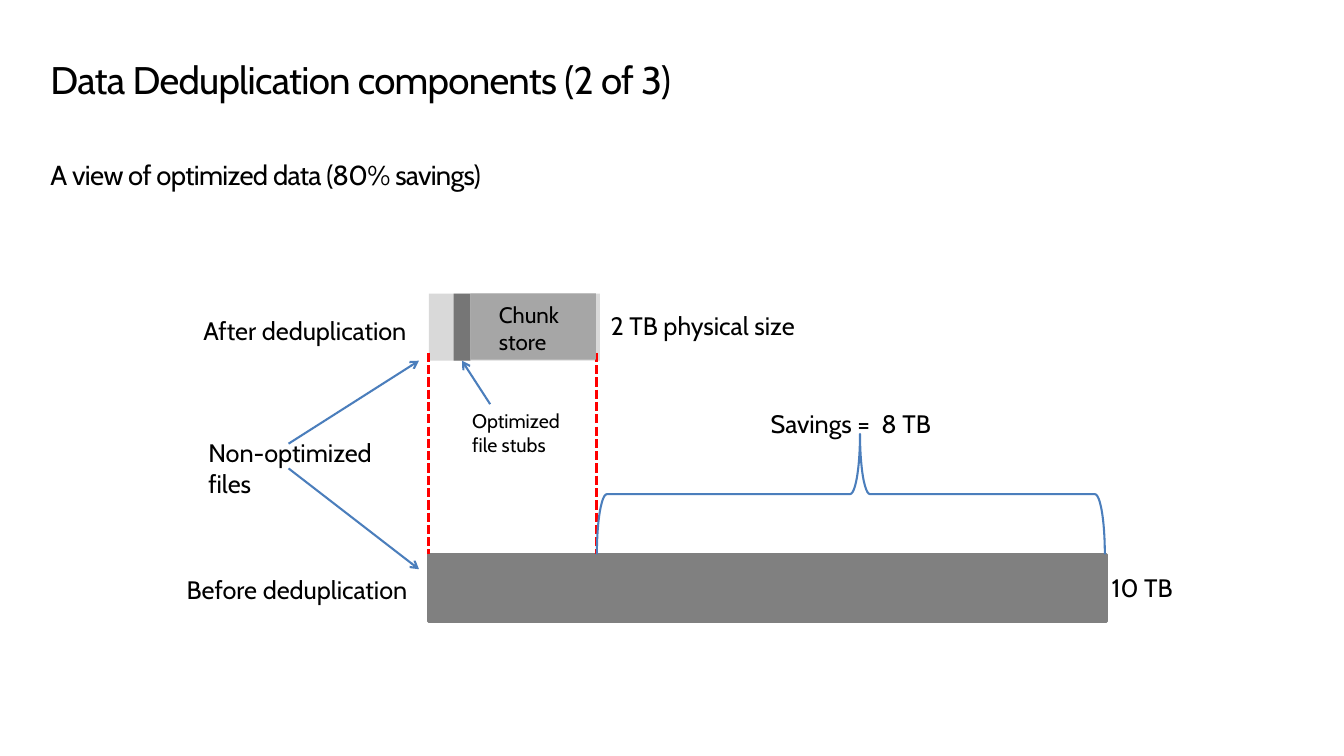
"""Build a slide that compares storage before and after data deduplication."""
from dataclasses import dataclass

from lxml.etree import SubElement
from pptx import Presentation
from pptx.dml.color import RGBColor
from pptx.enum.dml import MSO_LINE_DASH_STYLE as Dash
from pptx.enum.shapes import MSO_CONNECTOR_TYPE as Connector
from pptx.enum.shapes import MSO_SHAPE as Preset
from pptx.enum.text import MSO_ANCHOR as Anchor
from pptx.enum.text import MSO_AUTO_SIZE as AutoSize
from pptx.enum.text import PP_ALIGN as Align
from pptx.oxml.ns import qn
from pptx.util import Inches, Pt

FONT = "Cabin"
COLORS = {
    "text": "000000",
    "unoptimized": "D9D9D9",
    "before": "808080",
    "stubs": "767676",
    "chunks": "A6A6A6",
    "boundary": "FF0000",
    "pointer": "4B7EBC",
}
AFTER_TOP, BEFORE_TOP, BAR_HEIGHT = 2.97, 5.61, 0.68
BAR_LEFT, SAVINGS_LEFT = 4.34, 6.04
BOUNDARY_TOP = 3.57
POINTER_START, POINTER_END = 2.92, 4.24


@dataclass
class Bar:
    """A filled rectangle standing for a share of the storage."""
    color: str
    left: float
    top: float
    width: float
    height: float = BAR_HEIGHT
    outline: float = 0


@dataclass
class Label:
    """A caption with one paragraph per line."""
    lines: tuple[str, ...]
    left: float
    top: float
    width: float
    height: float = 0.42
    size: float = 18.4


@dataclass
class Line:
    """A straight line, either dashed or ending in an arrowhead."""
    color: str
    start: tuple[float, float]
    end: tuple[float, float]
    weight: float = 1.5
    dashed: bool = False


FULL_BARS = [
    Bar("unoptimized", BAR_LEFT, AFTER_TOP, 1.73),
    Bar("before", BAR_LEFT, BEFORE_TOP, 6.86, outline=2),
]
STUB_BAR = Bar("stubs", 4.59, AFTER_TOP, 0.17)
CHUNK_BAR = Bar("chunks", 4.76, AFTER_TOP, 1.27, 0.67)
BOUNDARIES = [
    Line("boundary", (x, BOUNDARY_TOP), (x, BEFORE_TOP), 2.25, True)
    for x in (SAVINGS_LEFT, BAR_LEFT)
]
POINTERS = [
    Line("pointer", (POINTER_START, 4.49), (POINTER_END, 3.65)),
    Line("pointer", (POINTER_START, 4.74), (POINTER_END, 5.76)),
]
STUB_POINTER = Line("pointer", (4.96, 4.09), (4.68, 3.65))
LABELS = [
    Label(("After deduplication",), 1.96, 3.14, 2.44),
    Label(("Before deduplication",), 1.79, 5.76, 2.62),
    Label(("Chunk", "store"), 4.95, 3, 0.93, 0.66, 16.3),
    Label(("Non-optimized", "files"), 2.01, 4.38, 2.04, 0.73),
    Label(("2 TB physical size",), 6.08, 3.09, 2.2),
    Label(("10 TB",), 11.15, 5.74, 0.85),
    Label(("Savings =  8 TB",), 7.7, 4.08, 1.98),
    Label(("Optimized", "file stubs"), 4.68, 4.09, 1.2, 0.59, 14.3),
]


def rgb(name: str) -> RGBColor:
    """Look up a named colour."""
    return RGBColor.from_string(COLORS[name])


def add_span(para, text: str, size: float):
    """Append a formatted run to a paragraph."""
    span = para.add_run()
    span.text = text
    span.font.name = FONT
    span.font.size = Pt(size)
    span.font.color.rgb = rgb("text")
    return span


def fill_placeholder(holder, text: str, size: float, top: float,
                     height: float, bottom_inset: float):
    """Place a placeholder, write its text and return the paragraph."""
    holder.left, holder.top = Inches(0.51), Inches(top)
    holder.width, holder.height = Inches(12.61), Inches(height)
    frame = holder.text_frame
    frame.margin_left = frame.margin_top = 0
    frame.margin_right, frame.margin_bottom = Inches(0.1), Inches(bottom_inset)
    frame.vertical_anchor = Anchor.TOP
    frame.auto_size = AutoSize.NONE
    para = frame.paragraphs[0]
    para.alignment = Align.LEFT
    span = add_span(para, text, size)
    span.font._element.set("spc", "-50")
    return para


def add_bar(page, bar: Bar):
    """Draw a storage bar."""
    box = page.shapes.add_shape(
        Preset.RECTANGLE, Inches(bar.left), Inches(bar.top),
        Inches(bar.width), Inches(bar.height))
    box.shadow.inherit = False
    box.fill.solid()
    box.fill.fore_color.rgb = rgb(bar.color)
    if bar.outline:
        box.line.color.rgb = rgb(bar.color)
        box.line.width = Pt(bar.outline)
    else:
        box.line.fill.background()
    return box


def add_line(page, line: Line):
    """Draw a dashed boundary or an arrow."""
    connector = page.shapes.add_connector(
        Connector.STRAIGHT, *map(Inches, line.start + line.end))
    connector.line.color.rgb = rgb(line.color)
    connector.line.width = Pt(line.weight)
    if line.dashed:
        connector.line.dash_style = Dash.SQUARE_DOT
    else:
        SubElement(connector.get_or_add_ln(), qn("a:tailEnd"), type="arrow")
    SubElement(connector.element.spPr, qn("a:effectLst"))
    return connector


def add_brace(page) -> None:
    """Draw the brace that spans the saved storage."""
    brace = page.shapes.add_shape(
        Preset.LEFT_BRACE, Inches(8), Inches(2.43), Inches(1.22), Inches(5.14))
    brace.rotation = 90
    brace.adjustments[0], brace.adjustments[1] = 0.083, 0.482
    brace.shadow.inherit = False
    brace.fill.background()
    brace.line.color.rgb = rgb("pointer")
    brace.line.width = Pt(1.5)


def add_label(page, label: Label) -> None:
    """Draw a caption."""
    box = page.shapes.add_textbox(
        Inches(label.left), Inches(label.top),
        Inches(label.width), Inches(label.height))
    frame = box.text_frame
    frame.word_wrap = False
    frame.auto_size = AutoSize.SHAPE_TO_FIT_TEXT
    for index, text in enumerate(label.lines):
        para = frame.add_paragraph() if index else frame.paragraphs[0]
        add_span(para, text, label.size)


def main() -> None:
    """Build and save the deck."""
    deck = Presentation()
    deck.slide_width, deck.slide_height = Inches(13.6), Inches(7.65)
    page = deck.slides.add_slide(deck.slide_layouts[1])
    title = fill_placeholder(page.shapes.title, "Data Deduplication components (2 of 3)",
                             28, 0.62, 0.45, 0)
    title.line_spacing = 0.9
    body = fill_placeholder(page.placeholders[1], "A view of optimized data (80% savings)",
                            20, 1.6, 5.56, 0.05)
    body.space_before = Pt(12)
    properties = body._p.get_or_add_pPr()
    properties.set("marL", "0")
    properties.set("indent", "0")
    SubElement(properties, qn("a:buNone"))
    for bar in FULL_BARS:
        add_bar(page, bar)
    for boundary in BOUNDARIES:
        add_line(page, boundary)
    stubs = add_bar(page, STUB_BAR)
    add_bar(page, CHUNK_BAR)
    add_brace(page)
    for label in LABELS:
        add_label(page, label)
    for pointer in POINTERS:
        add_line(page, pointer)
    add_line(page, STUB_POINTER).end_connect(stubs, 2)
    deck.save("out.pptx")


if __name__ == "__main__":
    main()
